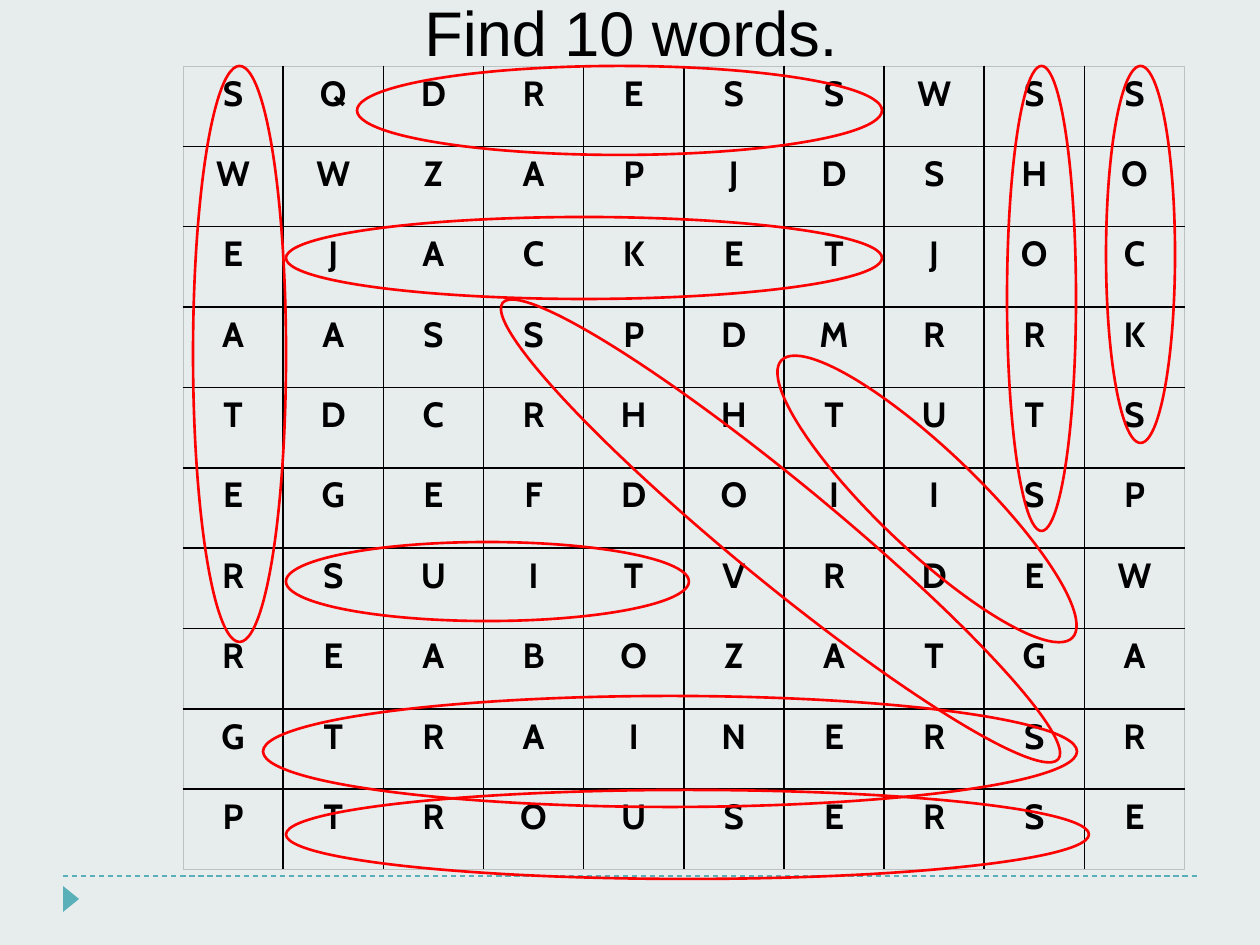
from dataclasses import dataclass

from lxml.etree import SubElement
from pptx import Presentation
from pptx.dml.color import RGBColor
from pptx.enum.dml import MSO_LINE
from pptx.enum.shapes import MSO_CONNECTOR, MSO_SHAPE
from pptx.enum.text import MSO_ANCHOR, PP_ALIGN
from pptx.oxml.ns import qn
from pptx.util import Emu, Pt


@dataclass(frozen=True)
class Theme:
    back: str = "E7ECED"
    ink: str = "000000"
    edge: str = "BDC1C2"
    mark: str = "FF0000"
    teal: str = "59B0B9"
    head: int = 36
    cell: int = 20
    sans: str = "Arial"
    grid: str = "Cabin"


ROWS = (
    "SQDRESSWSS",
    "WWZAPJDSHO",
    "EJACKETJOC",
    "AASSPDMRRK",
    "TDCRHHTUTS",
    "EGEFDOIISP",
    "RSUITVRDEW",
    "REABOZATGA",
    "GTRAINERSR",
    "PTROUSERSE",
)

RINGS = (
    (357, 66, 525, 89, 0),
    (193, 66, 93, 576, 0),
    (1106, 66, 69, 377, 0),
    (286, 217, 596, 82, 0),
    (421, 481, 719, 100, 39.4),
    (726, 449, 402, 100, 43.6),
    (263, 696, 814, 111, 0),
    (286, 790, 803, 89, 0),
    (286, 542, 403, 79, 0),
    (1007, 66, 69, 465, 0),
)


def px(*nums):
    return [Emu(round(num * 914400 / 126)) for num in nums]


class Page:
    def __init__(self, deck, theme):
        self.theme = theme
        self.slide = deck.slides.add_slide(deck.slide_layouts[6])
        self.shapes = self.slide.shapes
        fill = self.slide.background.fill
        fill.solid()
        fill.fore_color.rgb = RGBColor.from_string(theme.back)

    def label(self, frame, text, **form):
        para = frame.paragraphs[0]
        para.alignment = PP_ALIGN.CENTER
        run = para.add_run()
        run.text = text
        for key, val in form.items():
            setattr(run.font, key, val)
        run.font.color.rgb = RGBColor.from_string(self.theme.ink)

    def title(self, text, *box):
        frame = self.shapes.add_textbox(*px(*box)).text_frame
        form = {"word_wrap": True, "vertical_anchor": MSO_ANCHOR.MIDDLE}
        for key, val in form.items():
            setattr(frame, key, val)
        self.label(frame, text, size=Pt(self.theme.head), name=self.theme.sans)

    def rule(self, *ends):
        rule = self.shapes.add_connector(MSO_CONNECTOR.STRAIGHT, *px(*ends))
        rule.line.color.rgb = RGBColor.from_string(self.theme.teal)
        form = {"width": Pt(0.75), "dash_style": MSO_LINE.DASH}
        for key, val in form.items():
            setattr(rule.line, key, val)
        SubElement(rule._element.spPr, qn("a:effectLst"))

    def shape(self, kind, box, turn):
        shape = self.shapes.add_shape(kind, *px(*box))
        shape.shadow.inherit = False
        shape.rotation = turn
        return shape

    def arrow(self, *box):
        shape = self.shape(MSO_SHAPE.ISOSCELES_TRIANGLE, box, 90)
        shape.fill.solid()
        shape.fill.fore_color.rgb = RGBColor.from_string(self.theme.teal)
        shape.line.fill.background()

    def ring(self, *box, turn=0):
        shape = self.shape(MSO_SHAPE.OVAL, box, turn)
        shape.fill.background()
        shape.line.color.rgb = RGBColor.from_string(self.theme.mark)
        shape.line.width = Pt(1.5)

    def border(self, cell, sides):
        props = cell._tc.get_or_add_tcPr()
        for spot, (side, outer) in enumerate(sides.items()):
            width = Pt(0.5 if outer else 1)
            line = SubElement(props, qn(f"a:ln{side}"), w=str(width))
            paint = SubElement(line, qn("a:solidFill"))
            tint = self.theme.edge if outer else self.theme.ink
            SubElement(paint, qn("a:srgbClr"), val=tint)
            props.insert(spot, line)

    def grid(self, rows, *box):
        high, wide = len(rows), len(rows[0])
        table = self.shapes.add_table(high, wide, *px(*box)).table
        for key in ("first_row", "horz_banding"):
            setattr(table, key, False)
        for row, word in enumerate(rows):
            for col, char in enumerate(word):
                cell = table.cell(row, col)
                cell.fill.background()
                self.label(cell.text_frame, char, size=Pt(self.theme.cell),
                           name=self.theme.grid, bold=True)
                self.border(cell, {"L": col == 0, "R": col == wide - 1,
                                   "T": row == 0, "B": row == high - 1})


def main():
    deck = Presentation()
    deck.slide_width, deck.slide_height = px(1260, 945)
    page = Page(deck, Theme())
    page.rule(63, 876, 1197, 876)
    page.arrow(58, 891, 26, 16)
    page.grid(ROWS, 183, 66, 1002, 804)
    for *box, turn in RINGS:
        page.ring(*box, turn=turn)
    page.title("Find 10 words.", 64, -3, 1134, 68)
    deck.save("out.pptx")


if __name__ == "__main__":
    main()
